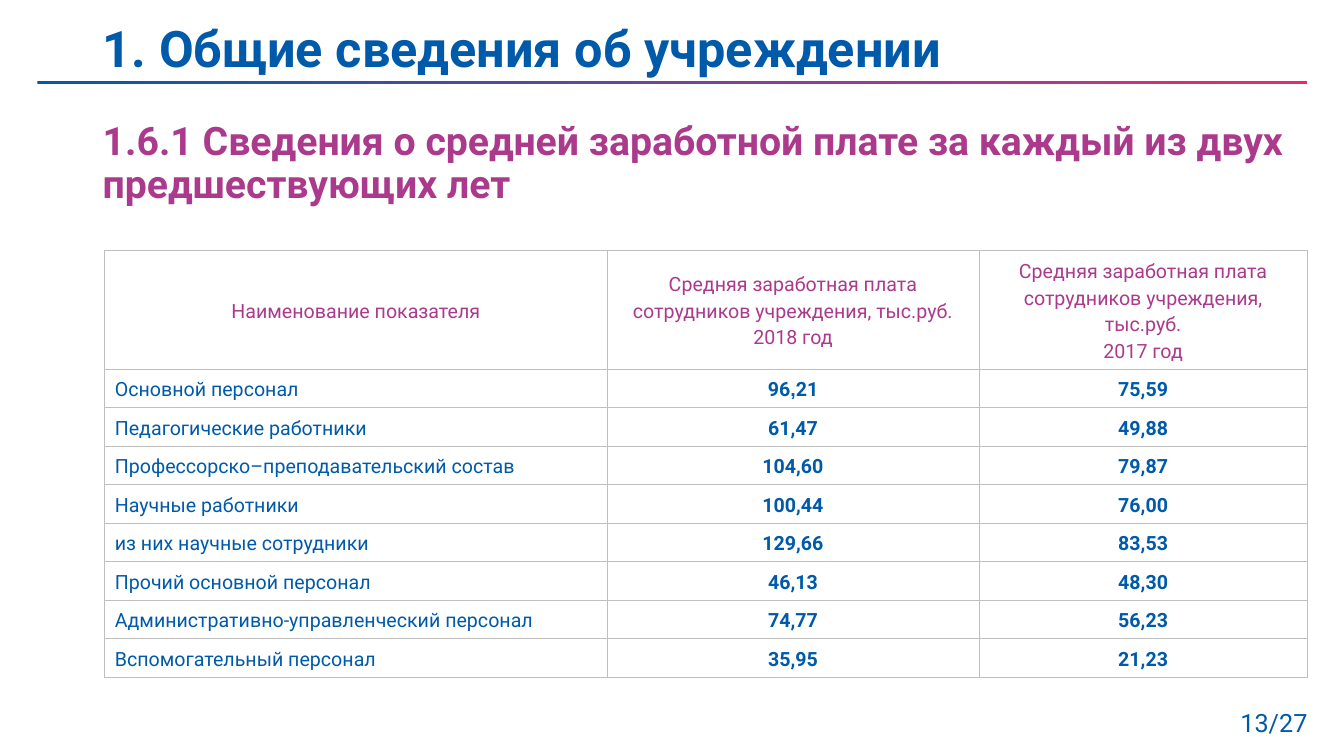
from copy import deepcopy
from dataclasses import dataclass

from lxml import etree
from pptx import Presentation
from pptx.dml.color import RGBColor
from pptx.enum.shapes import MSO_SHAPE
from pptx.enum.text import MSO_ANCHOR, MSO_AUTO_SIZE, PP_ALIGN
from pptx.oxml.ns import qn
from pptx.util import Cm, Pt

RECTANGLE = MSO_SHAPE.RECTANGLE
MIDDLE = MSO_ANCHOR.MIDDLE
NO_AUTOFIT = MSO_AUTO_SIZE.NONE
LEFT, CENTER, RIGHT = PP_ALIGN.LEFT, PP_ALIGN.CENTER, PP_ALIGN.RIGHT
TITLE_ONLY = 5


@dataclass(frozen=True)
class Theme:
    font: str = "Roboto"
    comma_font: str = "Arial"
    blue: str = "005AAA"
    purple: str = "AB3A8D"
    pink: str = "E72B70"
    border: str = "BFBFBF"
    title_size: int = 36
    subtitle_size: int = 28
    page_size: int = 18
    table_size: int = 14
    border_width: float = 0.5


class SlideBuilder:
    def __init__(self, slide, theme):
        self.slide = slide
        self.theme = theme

    def fill_paragraph(self, para, pieces, size, color, bold=False, align=LEFT, spacing=1.0):
        """Add the pieces as runs; a lone comma takes the comma font."""
        para.alignment = align
        para.line_spacing = spacing
        for piece in pieces:
            span = para.add_run()
            span.text = piece
            span.font.name = self.theme.comma_font if piece == "," else self.theme.font
            span.font.size = Pt(size)
            span.font.bold = bold
            span.font.color.rgb = RGBColor.from_string(color)

    def title(self, text, left, top, width, height):
        box = self.slide.shapes.title
        box.left, box.top, box.width, box.height = map(Cm, (left, top, width, height))
        frame = box.text_frame
        frame.auto_size = NO_AUTOFIT
        frame.vertical_anchor = MIDDLE
        self.fill_paragraph(frame.paragraphs[0], [text], self.theme.title_size,
                            self.theme.blue, bold=True, spacing=0.9)

    def text(self, text, left, top, width, height, size, color, **style):
        box = self.slide.shapes.add_textbox(*map(Cm, (left, top, width, height)))
        box.text_frame.word_wrap = True
        self.fill_paragraph(box.text_frame.paragraphs[0], [text], size, color, **style)

    def gradient_bar(self, stops, left, top, width, height):
        bar = self.slide.shapes.add_shape(RECTANGLE, *map(Cm, (left, top, width, height)))
        bar.shadow.inherit = False
        bar.line.fill.background()
        bar.fill.gradient()
        bar.fill.gradient_angle = 0
        stop_list = bar.fill.gradient_stops
        holder = bar._element.spPr.find(".//" + qn("a:gsLst"))
        for _ in range(len(stops) - len(stop_list)):
            holder.append(deepcopy(holder[-1]))
        for stop, (position, color) in zip(bar.fill.gradient_stops, stops):
            stop.position = position
            stop.color.rgb = RGBColor.from_string(color)

    def border(self, cell):
        properties = cell._tc.get_or_add_tcPr()
        for side in ("a:lnL", "a:lnR", "a:lnT", "a:lnB"):
            line = etree.SubElement(properties, qn(side), w=str(Pt(self.theme.border_width)))
            fill = etree.SubElement(line, qn("a:solidFill"))
            etree.SubElement(fill, qn("a:srgbClr"), val=self.theme.border)

    def cell(self, cell, paragraphs, color, bold, align):
        self.border(cell)
        cell.fill.background()
        cell.vertical_anchor = MIDDLE
        frame = cell.text_frame
        for index, pieces in enumerate(paragraphs):
            para = frame.add_paragraph() if index else frame.paragraphs[0]
            self.fill_paragraph(para, pieces, self.theme.table_size, color, bold, align, 1.15)

    def table(self, header, rows, left, top, column_widths, header_height, row_height):
        heights = [header_height] + [row_height] * len(rows)
        table = self.slide.shapes.add_table(
            len(heights), len(header), Cm(left), Cm(top),
            Cm(sum(column_widths)), Cm(sum(heights))).table
        table.first_row = table.horz_banding = False
        for column, width in zip(table.columns, column_widths):
            column.width = Cm(width)
        for row, height in zip(table.rows, heights):
            row.height = Cm(height)
        for column, lines in enumerate(header):
            self.cell(table.cell(0, column), [[line] for line in lines],
                      self.theme.purple, False, CENTER)
        for row, values in enumerate(rows, start=1):
            for column, value in enumerate(values):
                pieces = [value] if isinstance(value, str) else value
                self.cell(table.cell(row, column), [pieces], self.theme.blue,
                          column > 0, CENTER if column else LEFT)


SALARY = "Средняя заработная плата сотрудников учреждения, тыс.руб."
HEADER = [["Наименование показателя"], [SALARY, "2018 год"], [SALARY, "2017 год"]]
SALARIES = [
    ("Основной персонал", ("96", ",", "21"), "75,59"),
    ("Педагогические работники", "61,47", "49,88"),
    ("Профессорско–преподавательский состав", "104,60", "79,87"),
    ("Научные работники", "100,44", "76,00"),
    ("из них научные сотрудники", "129,66", "83,53"),
    ("Прочий основной персонал", "46,13", "48,30"),
    ("Административно-управленческий персонал", "74,77", "56,23"),
    ("Вспомогательный персонал", "35,95", "21,23"),
]


def main():
    theme = Theme()
    deck = Presentation()
    deck.slide_width, deck.slide_height = Cm(33.87), Cm(19.05)
    page = SlideBuilder(deck.slides.add_slide(deck.slide_layouts[TITLE_ONLY]), theme)

    page.gradient_bar([(0, theme.blue), (0.75, theme.purple), (1, theme.pink)],
                      0.94, 2.03, 32, 0.1)
    page.text("13/27", 30.91, 17.7, 2.29, 1.02, theme.page_size, theme.blue, align=RIGHT)
    page.text("1.6.1 Сведения о средней заработной плате за каждый из двух "
              "предшествующих лет", 2.34, 2.95, 30.61, 14.1,
              theme.subtitle_size, theme.purple, bold=True, spacing=0.9)
    page.title("1. Общие сведения об учреждении", 2.34, 0.25, 29.21, 2.08)
    page.table(HEADER, SALARIES, 2.64, 6.32, (12.66, 9.37, 8.28), 2.97, 0.97)

    deck.save("out.pptx")


if __name__ == "__main__":
    main()
